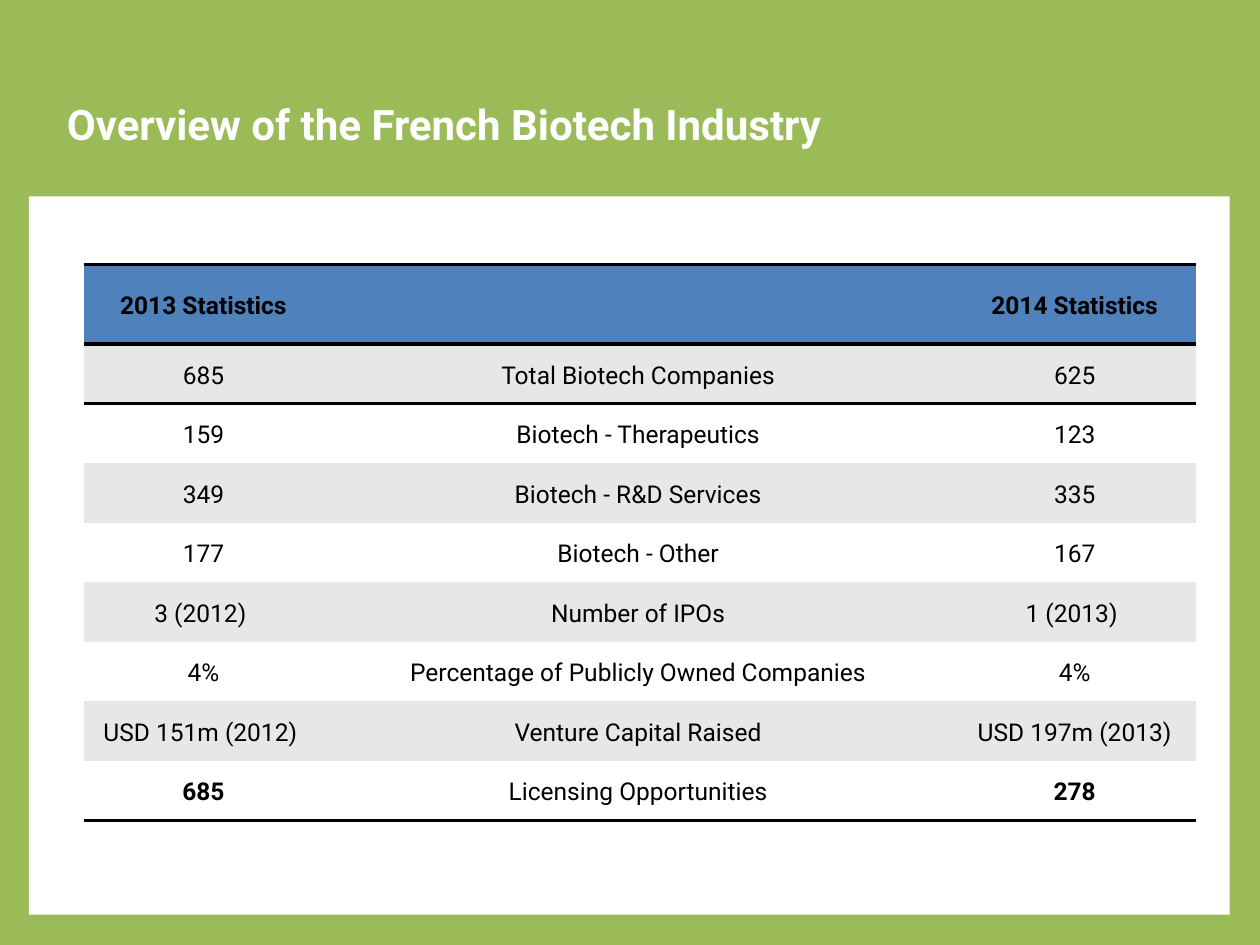
from pptx import Presentation
from pptx.dml.color import RGBColor as RGB
from pptx.enum.shapes import MSO_SHAPE as SHAPE
from pptx.enum.text import MSO_ANCHOR as ANCHOR, PP_ALIGN as ALIGN
from pptx.oxml import parse_xml
from pptx.oxml.ns import nsdecls, qn
from pptx.util import Inches, Pt

COLORS = {"green": "9BBB59", "blue": "4F81BD", "gray": "E7E7E7",
          "white": "FFFFFF", "black": "000000"}
NO_STYLE = "{2D5ABB26-0587-4C30-8999-92F81FD0307C}"
CELL = {"vertical_anchor": ANCHOR.MIDDLE, "margin_left": Inches(0.07),
        "margin_right": Inches(0.07), "margin_top": 0, "margin_bottom": 0}
ROWS = [
    ("2013 Statistics", "", "2014 Statistics"),
    ("685", "Total Biotech Companies", "625"),
    ("159", "Biotech - Therapeutics", "123"),
    ("349", "Biotech - R&D Services", "335"),
    ("177", "Biotech - Other", "167"),
    ("3 (2012) ", "Number of IPOs", "1 (2013) "),
    ("4%", "Percentage of Publicly Owned Companies", "4%"),
    ("USD 151m (2012) ", "Venture Capital Raised", "USD 197m (2013)"),
    ("685", "Licensing Opportunities", "278"),
]
COL_WIDTHS = [1.89, 5.01, 1.92]
TABLE_H, HEADER_H = 4.41, 0.63
LAST = len(ROWS) - 1


def set_font(font, size, color, bold):
    values = {"name": "Roboto", "size": Pt(size), "bold": bold}
    for key, value in values.items():
        setattr(font, key, value)
    font.color.rgb = RGB.from_string(COLORS[color])


def add_border(cell, side):
    cell._tc.get_or_add_tcPr().append(parse_xml(
        f'<a:{side} {nsdecls("a")} w="{Pt(2)}"><a:solidFill>'
        f'<a:srgbClr val="{COLORS["black"]}"/></a:solidFill></a:{side}>'))


prs = Presentation()
prs.slide_width, prs.slide_height = Inches(10), Inches(7.5)
s = prs.slides.add_slide(prs.slide_layouts[5])
s.background.fill.solid()
s.background.fill.fore_color.rgb = RGB.from_string(COLORS["green"])

title = s.shapes.title
panel = s.shapes.add_shape(SHAPE.RECTANGLE, Inches(0.23), Inches(1.56),
                           Inches(9.53), Inches(5.7))
panel.shadow.inherit = False
panel.fill.solid()
panel.fill.fore_color.rgb = RGB.from_string(COLORS["white"])
panel.line.fill.background()
title.element.addprevious(panel.element)

box = {"left": 0.43, "top": 0.36, "width": 9, "height": 1.25}
for key, value in box.items():
    setattr(title, key, Inches(value))
tf = title.text_frame
tf.text = "Overview of the French Biotech Industry"
tf.vertical_anchor = ANCHOR.MIDDLE
p = tf.paragraphs[0]
p.alignment = ALIGN.LEFT
set_font(p.runs[0].font, 24, "white", True)

frame = s.shapes.add_table(len(ROWS), len(COL_WIDTHS), Inches(0.67), Inches(2.1),
                           Inches(sum(COL_WIDTHS)), Inches(TABLE_H))
frame.element.find(".//" + qn("a:tableStyleId")).text = NO_STYLE
table = frame.table
for col, width in zip(table.columns, COL_WIDTHS):
    col.width = Inches(width)

for i, texts in enumerate(ROWS):
    table.rows[i].height = Inches(HEADER_H if i == 0 else (TABLE_H - HEADER_H) / LAST)
    fill = "blue" if i == 0 else "gray" if i % 2 else "white"
    for j, text in enumerate(texts):
        cell = table.cell(i, j)
        for key, value in CELL.items():
            setattr(cell, key, value)
        if i == 0:
            add_border(cell, "lnT")
        if i == 1:
            add_border(cell, "lnT")
        if i in (0, LAST):
            add_border(cell, "lnB")
        cell.fill.solid()
        cell.fill.fore_color.rgb = RGB.from_string(COLORS[fill])
        p = cell.text_frame.paragraphs[0]
        p.alignment, p.line_spacing = ALIGN.CENTER, 1.15
        bold = i == 0 or (i == LAST and j != 1)
        if text:
            r = p.add_run()
            r.text = text
            set_font(r.font, 14, "black", bold)

prs.save("out.pptx")
